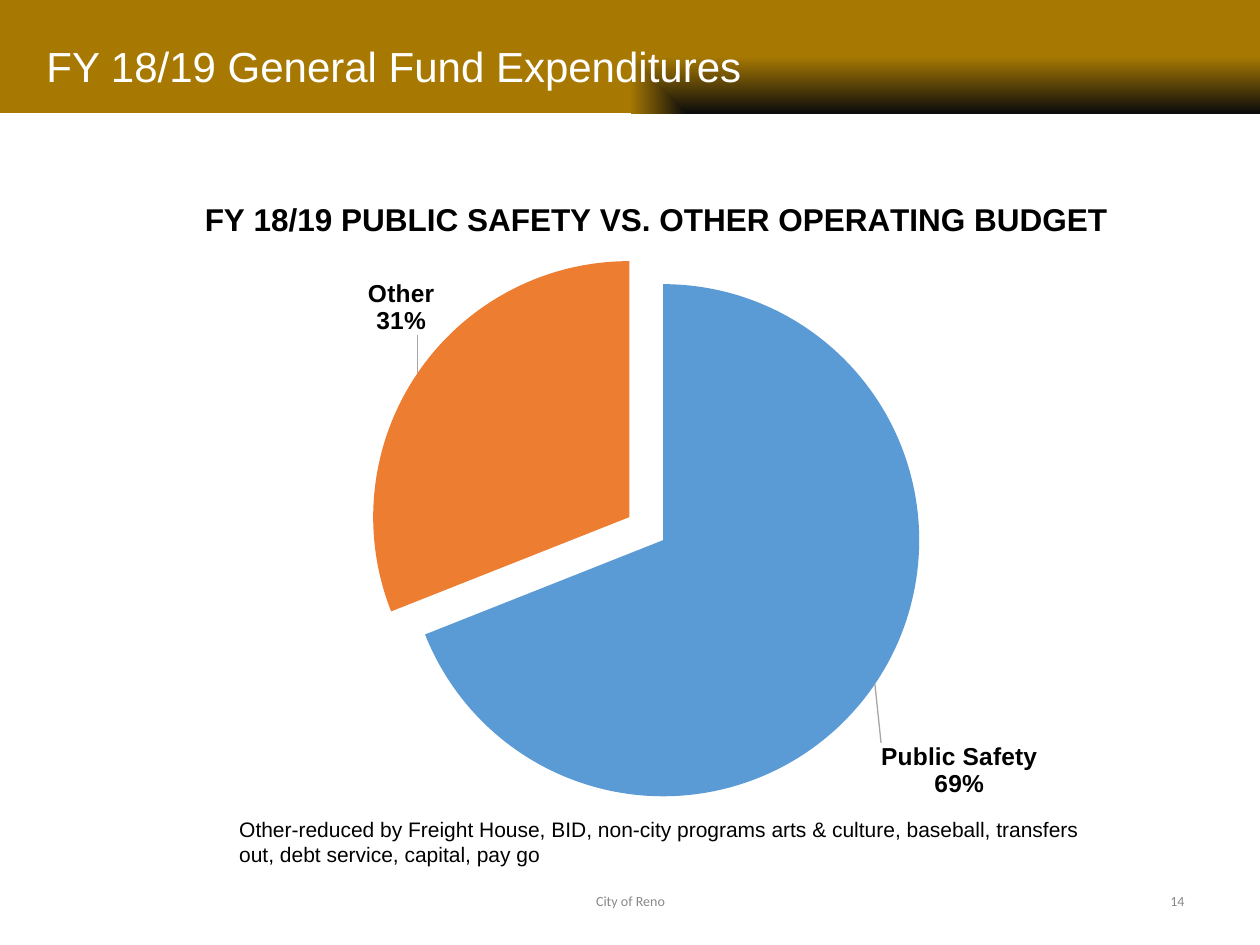
from lxml import etree
from pptx import Presentation
from pptx.chart.data import CategoryChartData
from pptx.dml.color import RGBColor
from pptx.enum.chart import XL_CHART_TYPE, XL_LABEL_POSITION
from pptx.enum.shapes import MSO_SHAPE
from pptx.enum.text import MSO_ANCHOR, PP_ALIGN
from pptx.oxml import parse_xml
from pptx.oxml.ns import nsdecls, qn
from pptx.util import Inches, Pt

PIE = XL_CHART_TYPE.PIE
OUTSIDE_END = XL_LABEL_POSITION.OUTSIDE_END
RECTANGLE = MSO_SHAPE.RECTANGLE
TOP, MIDDLE = MSO_ANCHOR.TOP, MSO_ANCHOR.MIDDLE
LEFT, CENTER, RIGHT = PP_ALIGN.LEFT, PP_ALIGN.CENTER, PP_ALIGN.RIGHT
COLORS = {"gold": "A77903", "dark": "0C0C0C", "white": "FFFFFF", "black": "000000",
          "gray": "898989", "leader": "A6A6A6", "Public Safety": "5B9BD5", "Other": "ED7D31"}


def style(font, size, color, name="Arial", bold=False):
    font.size, font.name, font.bold = Pt(size), name, bold
    font.color.rgb = RGBColor.from_string(COLORS[color])


def manual_layout(x, y, w=None, h=None, edge=False):
    values = {"x": x, "y": y}
    modes = ""
    if w:
        values.update(w=w, h=h)
        modes = '<c:layoutTarget val="inner"/>'
    if edge:
        modes += '<c:xMode val="edge"/><c:yMode val="edge"/>'
    sizes = "".join(f'<c:{key} val="{value}"/>' for key, value in values.items())
    return parse_xml(f'<c:layout {nsdecls("c")}><c:manualLayout>{modes}{sizes}'
                     '</c:manualLayout></c:layout>')


prs = Presentation()
prs.slide_width, prs.slide_height = Inches(10), Inches(7.5)
slide = prs.slides.add_slide(prs.slide_layouts[6])

banner = slide.shapes.add_shape(RECTANGLE, 0, 0, Inches(10), Inches(0.9))
banner.shadow.inherit = False
banner.line.fill.background()
banner.fill.gradient()
for stop, color, position in zip(banner.fill.gradient_stops, ("dark", "gold"), (0, 1)):
    stop.color.rgb = RGBColor.from_string(COLORS[color])
    stop.position = position
gradient = banner._element.spPr.find(qn("a:gradFill"))
for tag in ("a:lin", "a:tileRect"):
    for old in gradient.findall(qn(tag)):
        gradient.remove(old)
focus = etree.SubElement(gradient, qn("a:path"), path="rect")
etree.SubElement(focus, qn("a:fillToRect"), l="100000", t="100000")
etree.SubElement(gradient, qn("a:tileRect"), r="-100000", b="-100000")

texts = [
    ("FY 18/19 General Fund Expenditures", (0.27, 0.13, 7.81, 0.78),
     MIDDLE, LEFT, 24, "white", "Arial"),
    ("City of Reno", (3.42, 6.95, 3.17, 0.4), MIDDLE, CENTER, 8, "gray", "Calibri"),
    ("14", (7.17, 6.95, 2.33, 0.4), MIDDLE, RIGHT, 8, "gray", "Calibri"),
    ("Other-reduced by Freight House, BID, non-city programs arts & culture, baseball, "
     "transfers out, debt service, capital, pay go", (1.8, 6.43, 6.92, 0.5),
     TOP, LEFT, 12, "black", "Arial"),
]
for text, place, anchor, align, size, color, font_name in texts:
    frame = slide.shapes.add_textbox(*map(Inches, place)).text_frame
    frame.word_wrap = True
    frame.vertical_anchor = anchor
    paragraph = frame.paragraphs[0]
    paragraph.text = text
    paragraph.alignment = align
    style(paragraph.font, size, color, font_name)

budget = CategoryChartData()
budget.categories = ["Public Safety", "Other"]
budget.add_series("Series 1", (69, 31))
chart = slide.shapes.add_chart(PIE, Inches(0.38), Inches(1.26), Inches(9.23), Inches(5.42),
                               budget).chart
style(chart.font, 10, "black")
chart.has_legend = False
chart.has_title = True
heading = chart.chart_title.text_frame.paragraphs[0]
heading.text = "FY 18/19 PUBLIC SAFETY VS. OTHER OPERATING BUDGET"
style(heading.font, 18, "black", bold=True)
title = chart.chart_title._element
plot_area = chart._chartSpace.chart.plotArea
for parent in (title, plot_area):
    for old in parent.findall(qn("c:layout")):
        parent.remove(old)
title.find(qn("c:tx")).addnext(manual_layout(0.13, 0.05, edge=True))
plot_area.insert(0, manual_layout(0.08, 0.15, 0.84, 0.75, edge=True))

pie = chart.plots[0]
pie.vary_by_categories = True
shares = pie.series[0]
labels = shares.data_labels
labels.show_value = False
labels.show_category_name = labels.show_percentage = True
labels.number_format, labels.number_format_is_linked = "0%", False
labels.position = OUTSIDE_END
style(labels.font, 14, "black", bold=True)

for index, (category, shift) in enumerate([("Public Safety", (0, 0.08)), ("Other", (0.02, -0.05))]):
    point = shares.points[index]
    point.format.fill.solid()
    point.format.fill.fore_color.rgb = RGBColor.from_string(COLORS[category])
    point.format.line.fill.background()
    style(point.data_label.font, 14, "black", bold=True)
    point.data_label.position = OUTSIDE_END

slice_format = shares._element.find(qn("c:dPt")).find(qn("c:spPr"))
slice_format.addprevious(parse_xml(f'<c:explosion {nsdecls("c")} val="16"/>'))

label_group = shares._element.find(qn("c:dLbls"))
for label, shift in zip(label_group.findall(qn("c:dLbl")), [(0, 0.08), (0.02, -0.05)]):
    label.find(qn("c:idx")).addnext(manual_layout(*shift))
    for tag, shown in (("c:showVal", "0"), ("c:showCatName", "1"), ("c:showPercent", "1")):
        label.find(qn(tag)).set("val", shown)
for bubble in list(label_group.iter(qn("c:showBubbleSize"))):
    separator = parse_xml(f'<c:separator {nsdecls("c")}>\n</c:separator>')
    separator.text = "\n"
    bubble.addnext(separator)
for old in label_group.findall(qn("c:showLeaderLines")):
    label_group.remove(old)
label_group.append(parse_xml(f'<c:showLeaderLines {nsdecls("c")} val="1"/>'))
label_group.append(parse_xml(
    f'<c:leaderLines {nsdecls("c", "a")}><c:spPr><a:ln w="9525"><a:solidFill>'
    f'<a:srgbClr val="{COLORS["leader"]}"/></a:solidFill></a:ln></c:spPr></c:leaderLines>'))

prs.save("out.pptx")
